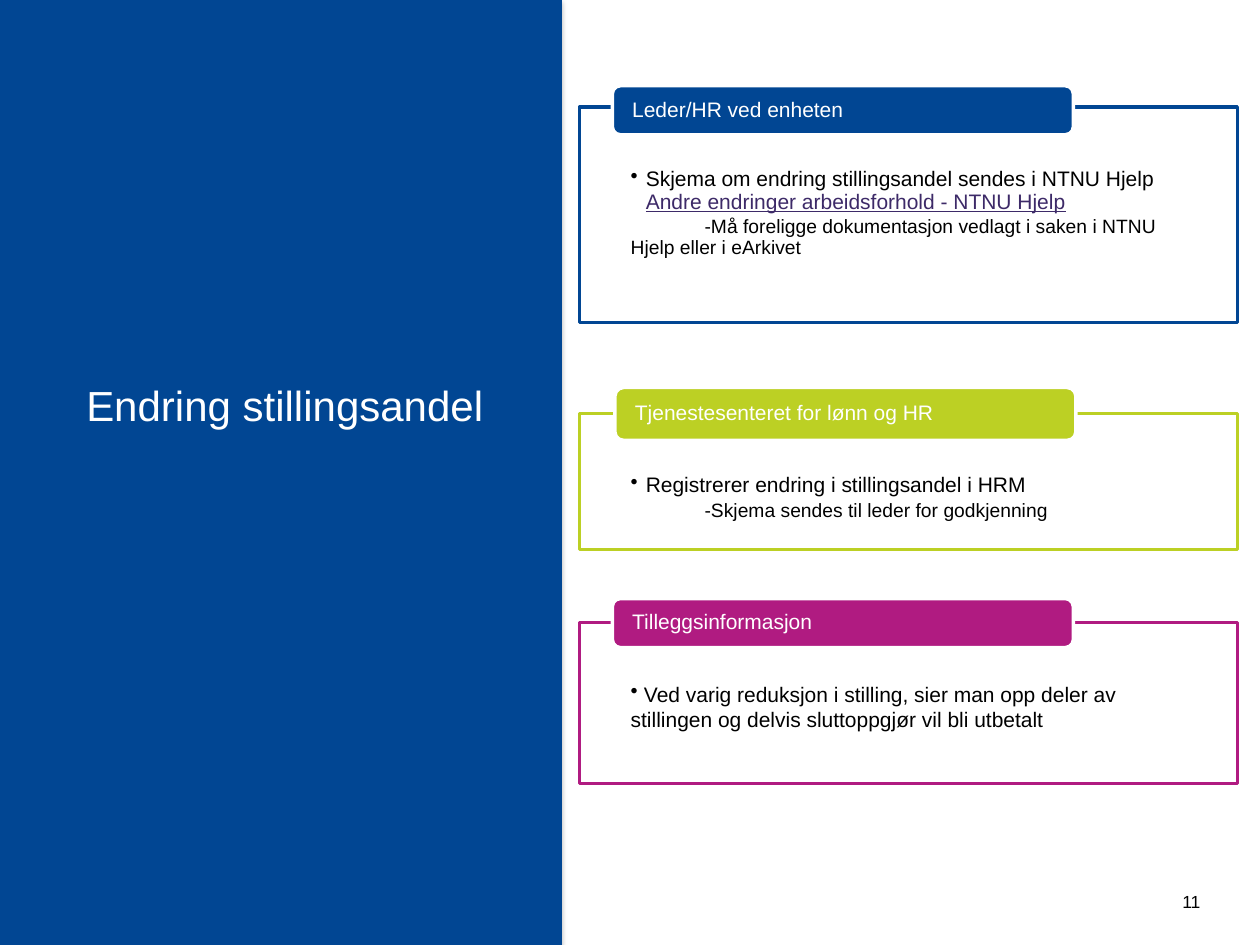
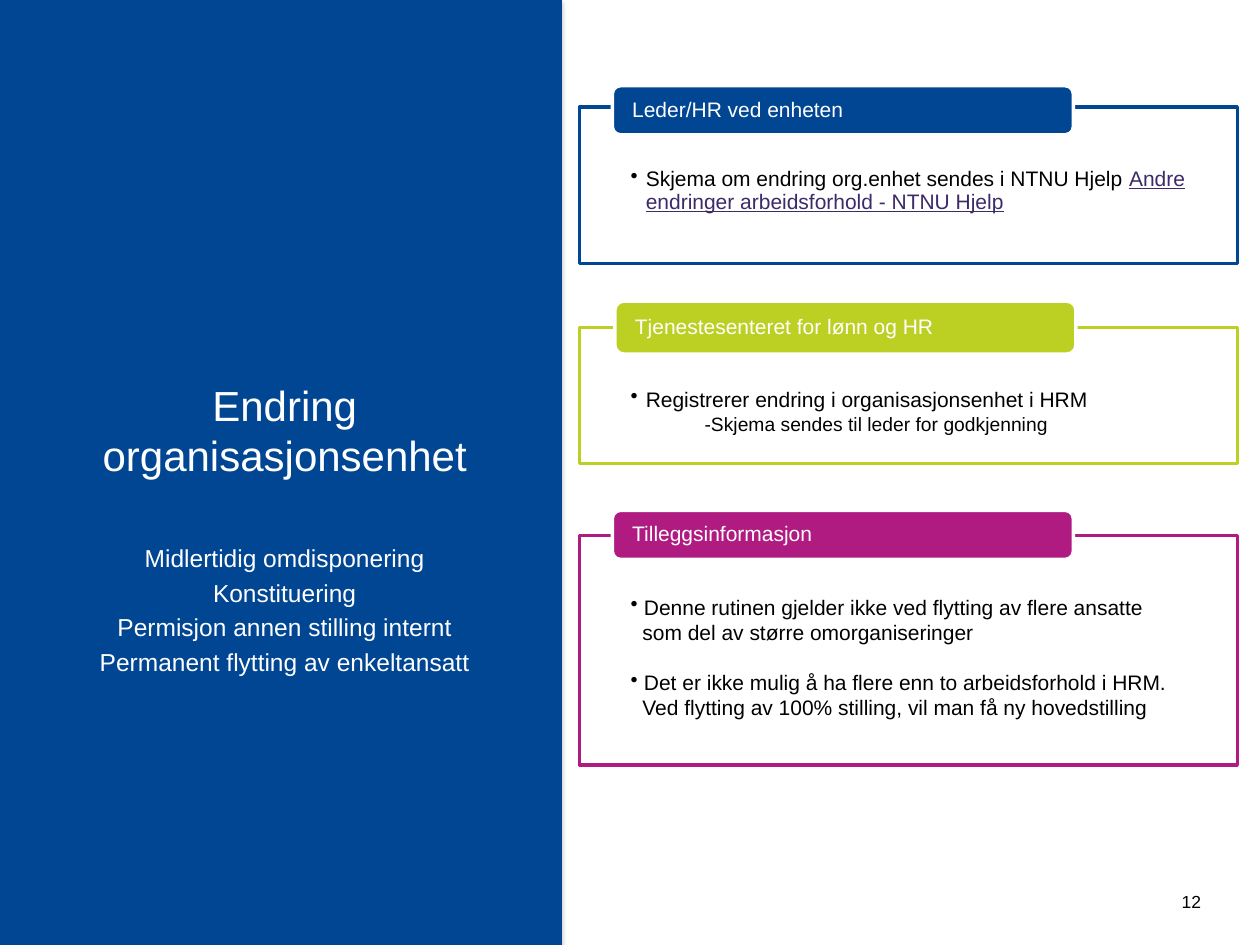
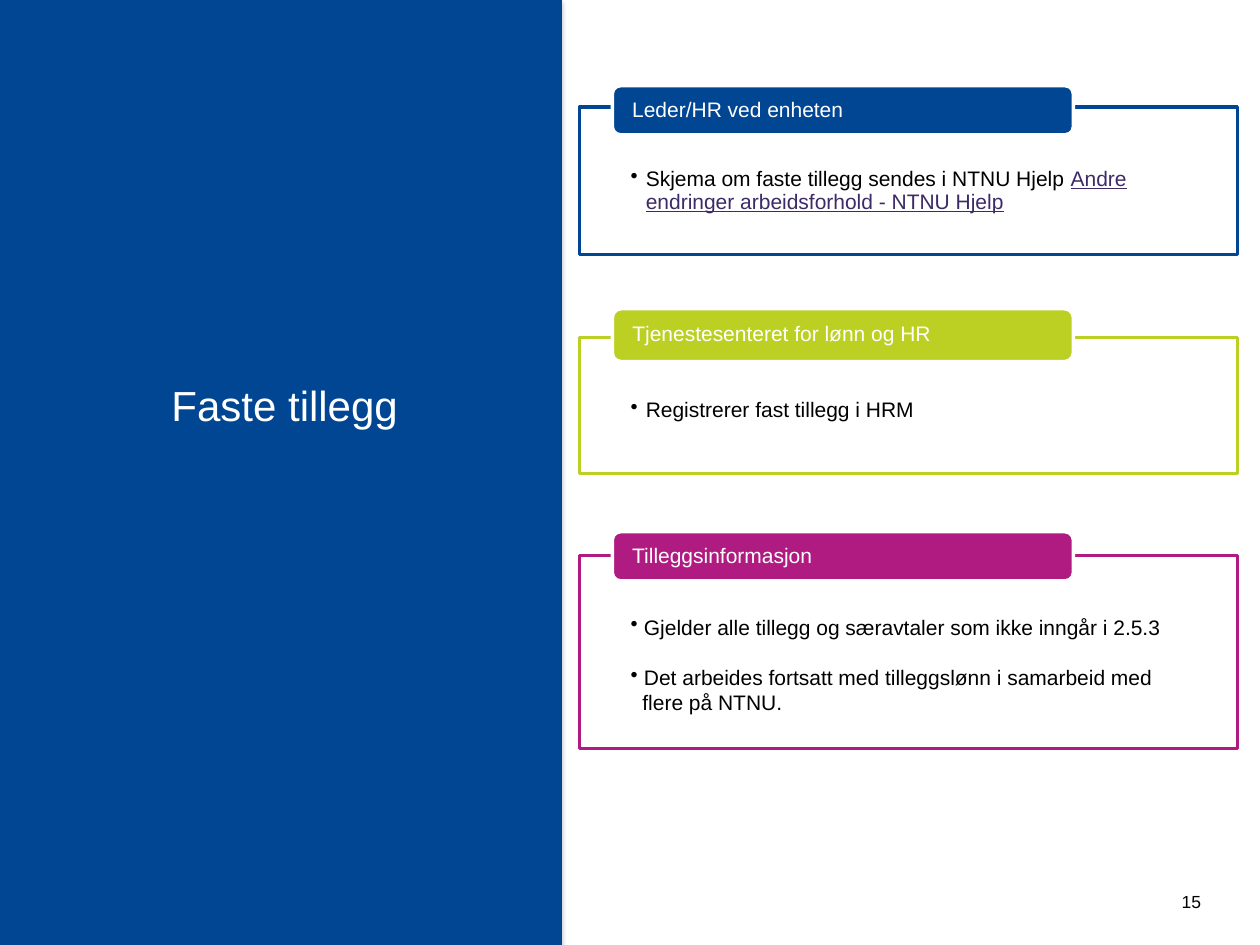
from lxml import etree
from pptx import Presentation
from pptx.dml.color import RGBColor
from pptx.enum.shapes import MSO_SHAPE
from pptx.enum.text import MSO_ANCHOR, PP_ALIGN
from pptx.oxml.ns import qn
from pptx.util import Pt

RECT, ROUNDED = MSO_SHAPE.RECTANGLE, MSO_SHAPE.ROUNDED_RECTANGLE
TOP, MIDDLE = MSO_ANCHOR.TOP, MSO_ANCHOR.MIDDLE
LEFT, CENTER = PP_ALIGN.LEFT, PP_ALIGN.CENTER

BLUE = RGBColor(0x01, 0x46, 0x93)
GREEN = RGBColor(0xBC, 0xD0, 0x24)
MAGENTA = RGBColor(0xB0, 0x1B, 0x81)
LINK = RGBColor(0x3D, 0x2A, 0x68)
WHITE = RGBColor(0xFF, 0xFF, 0xFF)
BLACK = RGBColor(0, 0, 0)
FONT = "Arial"

PANEL = (-2.16, 0, 323.28, 540)
TITLE = (18.72, 213.12, 288, 182.16)
PAGE_NUMBER = (667.44, 505.44, 26.64, 28.8)
FRAME_LEFT, FRAME_WIDTH = 331.2, 375.84
LABEL_LEFT, LABEL_WIDTH = 349.92, 263.52

ROLES = {
    "leader": dict(label="Leder/HR ved enheten", color=BLUE, label_height=28.08, inset=35),
    "service": dict(label="Tjenestesenteret for lønn og HR", color=GREEN, label_height=30.24, inset=35),
    "extra": dict(label="Tilleggsinformasjon", color=MAGENTA, label_height=28.08, inset=33.5),
}

STYLES = {
    "step": dict(bullet=True, margin=8.64, indent=-8.64, line=0.9, after=2),
    "detail": dict(size=11, indent=42.2, line=0.9, after=2),
    "note": dict(bullet=True),
    "next note": dict(bullet=True, before=14.4),
    "note line": dict(margin=6.7),
}

FORM_LINK = "Andre endringer arbeidsforhold - NTNU Hjelp"
APPROVAL = ("detail", "-Skjema sendes til leder for godkjenning")

SLIDES = [
    dict(number="11", title="Endring stillingsandel", topics=[], cards=[
        ("leader", 61.2, 123.12, 48.96, 0, [
            ("step", "Skjema om endring stillingsandel sendes i NTNU Hjelp ", FORM_LINK),
            ("detail", "-Må foreligge dokumentasjon vedlagt i saken i NTNU Hjelp eller i eArkivet"),
        ]),
        ("service", 236.16, 77.76, 221.4, 1.44, [
            ("step", "Registrerer endring i stillingsandel i HRM"),
            APPROVAL,
        ]),
        ("extra", 355.68, 92.16, 342, 0, [
            ("note", " Ved varig reduksjon i stilling, sier man opp deler av "
                     "stillingen og delvis sluttoppgjør vil bli utbetalt"),
        ]),
    ]),
    dict(number="12", title="Endring organisasjonsenhet", topics=[
        "Midlertidig omdisponering",
        "Konstituering",
        "Permisjon annen stilling internt",
        "Permanent flytting av enkeltansatt",
    ], cards=[
        ("leader", 61.2, 89.28, 48.96, 0, [
            ("step", "Skjema om endring org.enhet sendes i NTNU Hjelp ", FORM_LINK),
        ]),
        ("service", 187.2, 77.76, 172.08, 1.44, [
            ("step", "Registrerer endring i organisasjonsenhet i HRM"),
            APPROVAL,
        ]),
        ("extra", 306, 131.04, 291.6, 0, [
            ("note", " Denne rutinen gjelder ikke ved flytting av flere ansatte"),
            ("note line", "som del av større omorganiseringer"),
            ("next note", " Det er ikke mulig å ha flere enn to arbeidsforhold i HRM."),
            ("note line", "Ved flytting av 100% stilling, vil man få ny hovedstilling"),
        ]),
    ]),
    dict(number="15", title="Faste tillegg", topics=[], cards=[
        ("leader", 61.2, 84.24, 48.96, 0, [
            ("step", "Skjema om faste tillegg sendes i NTNU Hjelp ", FORM_LINK),
        ]),
        ("service", 192.96, 77.76, 176.4, 0, [
            ("step", "Registrerer fast tillegg i HRM"),
        ]),
        ("extra", 317.52, 110.16, 303.84, 0, [
            ("note", " Gjelder alle tillegg og særavtaler som ikke inngår i 2.5.3"),
            ("next note", " Det arbeides fortsatt med tilleggslønn i samarbeid med"),
            ("note line", "flere på NTNU."),
        ]),
    ]),
]


def add_box(slide, kind, area, fill, line=None):
    box = slide.shapes.add_shape(kind, *map(Pt, area))
    box.shadow.inherit = False
    box.fill.solid()
    box.fill.fore_color.rgb = fill
    if line is None:
        box.line.fill.background()
    else:
        box.line.color.rgb = line
        box.line.width = Pt(2)
    return box


def prepare_frame(shape, insets=(7.2, 3.6, 7.2, 3.6), anchor=TOP):
    frame = shape.text_frame
    frame.word_wrap = True
    frame.vertical_anchor = anchor
    frame.margin_left, frame.margin_top, frame.margin_right, frame.margin_bottom = map(Pt, insets)
    return frame


def write(frame, text, link="", size=12, color=BLACK, align=LEFT, bullet=False,
          margin=0, indent=0, line=1.0, before=0, after=0):
    paragraph = frame.paragraphs[0]
    if paragraph.runs:
        paragraph = frame.add_paragraph()
    properties = paragraph._p.get_or_add_pPr()
    properties.set("marL", str(Pt(margin)))
    properties.set("indent", str(Pt(indent)))
    if bullet:
        etree.SubElement(properties, qn("a:buChar"), char="•")
    else:
        etree.SubElement(properties, qn("a:buNone"))
    paragraph.alignment = align
    paragraph.line_spacing = line
    paragraph.space_before, paragraph.space_after = Pt(before), Pt(after)
    for words, tint in ((text, color), (link, LINK)):
        if words:
            run = paragraph.add_run()
            run.text = words
            run.font.name, run.font.size = FONT, Pt(size)
            run.font.color.rgb = tint
            if words == link:
                run.font.underline = True


def add_panel(slide):
    panel = add_box(slide, RECT, PANEL, BLUE)
    effects = panel._element.spPr.find(qn("a:effectLst"))
    shadow = etree.SubElement(effects, qn("a:outerShdw"), blurRad=str(Pt(3.1)),
                              dist=str(Pt(1.8)), dir="5400000", rotWithShape="0")
    tint = etree.SubElement(shadow, qn("a:srgbClr"), val=str(BLACK))
    etree.SubElement(tint, qn("a:alpha"), val="35000")


def add_title(slide, title, topics):
    frame = prepare_frame(slide.shapes.add_textbox(*map(Pt, TITLE)))
    write(frame, title, size=24, color=WHITE, align=CENTER)
    for index, topic in enumerate(topics):
        write(frame, topic, size=14, color=WHITE, align=CENTER, before=3 if index else 36)


def add_card(slide, role, top, height, label_top, label_shift, lines):
    look = ROLES[role]
    card = add_box(slide, RECT, (FRAME_LEFT, top, FRAME_WIDTH, height), WHITE, look["color"])
    frame = prepare_frame(card, (29.2, look["inset"], 29.2, 6.5))
    for style, *words in lines:
        write(frame, *words, **STYLES[style])
    area = (LABEL_LEFT + label_shift, label_top, LABEL_WIDTH, look["label_height"])
    label = add_box(slide, ROUNDED, area, look["color"], WHITE)
    write(prepare_frame(label, (10, 0, 10, 0), MIDDLE), look["label"], color=WHITE, line=0.9)


def main():
    deck = Presentation()
    deck.slide_width, deck.slide_height = Pt(720), Pt(540)
    blank = deck.slide_layouts[6]
    for content in SLIDES:
        slide = deck.slides.add_slide(blank)
        number = prepare_frame(slide.shapes.add_textbox(*map(Pt, PAGE_NUMBER)))
        write(number, content["number"], size=10, align=CENTER)
        add_panel(slide)
        add_title(slide, content["title"], content["topics"])
        for card in content["cards"]:
            add_card(slide, *card)
    deck.save("out.pptx")


if __name__ == "__main__":
    main()
